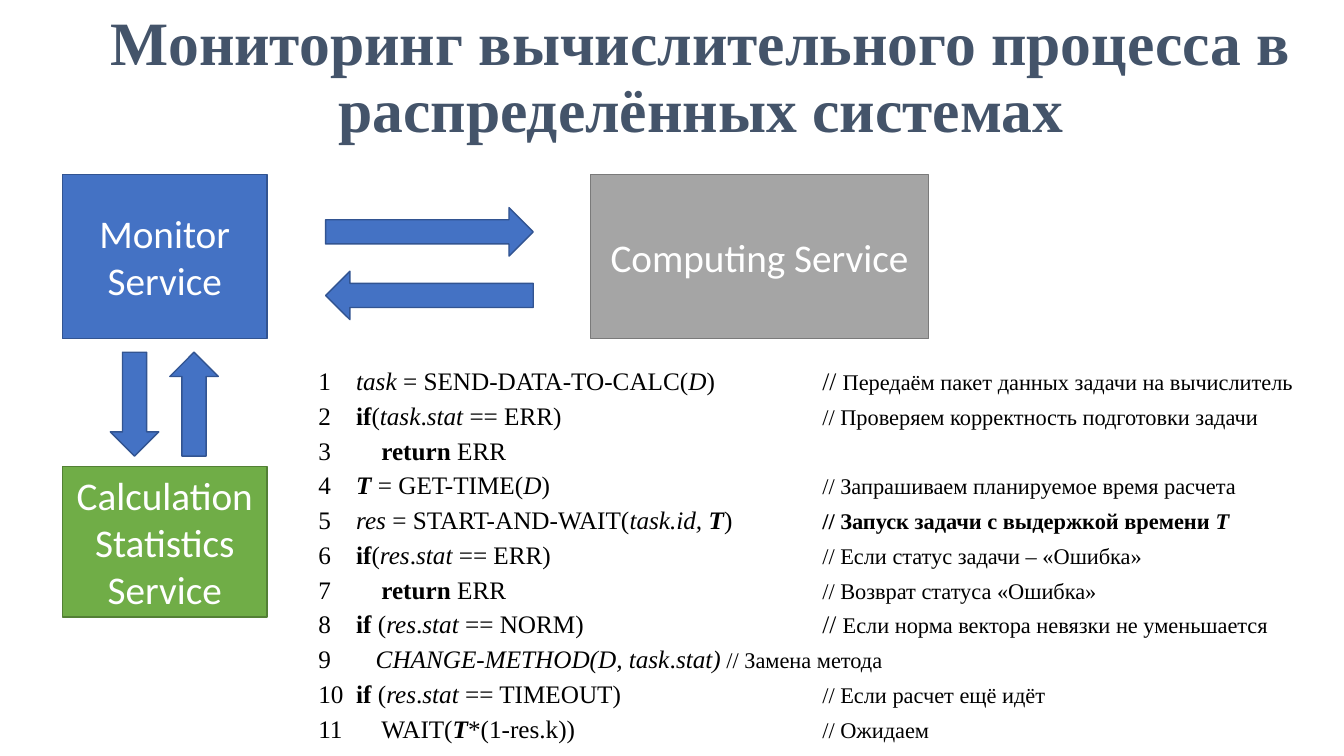
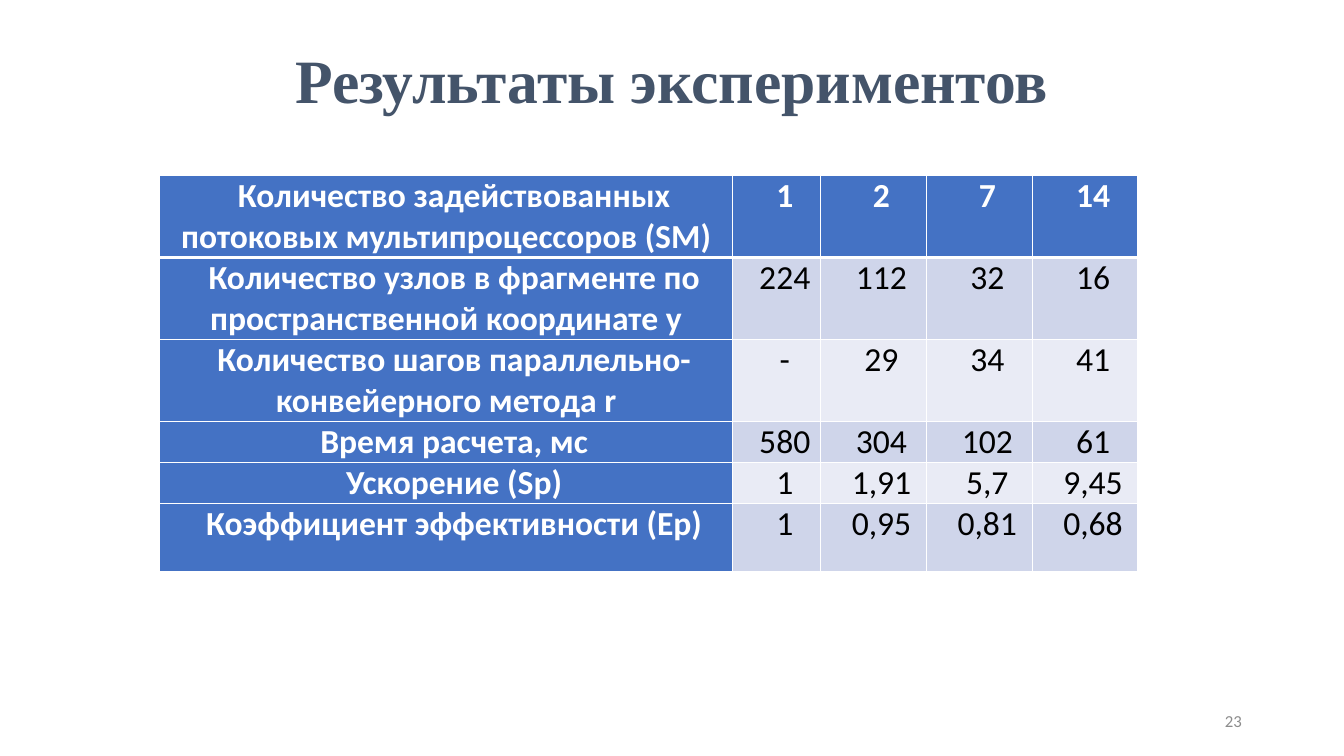
"""Builds two slides on monitoring distributed computations and the experiment results."""
from lxml import etree
from pptx import Presentation
from pptx.dml.color import RGBColor
from pptx.enum import shapes, text
from pptx.oxml import ns
from pptx.util import Pt

SLATE = RGBColor(0x44, 0x54, 0x6A)
BLUE, BLUE_EDGE = RGBColor(0x44, 0x72, 0xC4), RGBColor(0x32, 0x54, 0x91)
GREY, GREY_EDGE = RGBColor(0xA5, 0xA5, 0xA5), RGBColor(0x7A, 0x7A, 0x7A)
GREEN, GREEN_EDGE = RGBColor(0x70, 0xAD, 0x47), RGBColor(0x53, 0x80, 0x35)
BANDS = RGBColor(0xCF, 0xD5, 0xEA), RGBColor(0xE9, 0xEB, 0xF5)
PAGE_GREY = RGBColor(0x8C, 0x8C, 0x8C)
WHITE, BLACK = RGBColor(255, 255, 255), RGBColor(0, 0, 0)

TITLE_FONT = {"name": "Times New Roman", "size": Pt(44), "bold": True}
CODE_FONT = {"name": "Times New Roman", "size": Pt(18)}
SERVICE_FONT = {"name": "Calibri", "size": Pt(28)}
TABLE_FONT = {"name": "Calibri", "size": Pt(24)}
PAGE_FONT = {"name": "Calibri", "size": Pt(12)}
STYLES = {"b": {"bold": True}, "i": {"italic": True}, "s": {"size": Pt(16)}}
CENTER = text.PP_ALIGN.CENTER

MONITORING_TITLE = "Мониторинг вычислительного процесса в распределённых системах"
SERVICES = [
    ("Monitor Service", (44.6, 124.6, 146.2, 117.4), BLUE, BLUE_EDGE),
    ("Computing Service", (421.9, 124.6, 241.2, 117.4), GREY, GREY_EDGE),
    ("Calculation Statistics Service", (44.6, 333.4, 146.2, 107.3), GREEN, GREEN_EDGE),
]
ARROWS = [
    ((232.6, 148.3, 148.3, 34.6), 0),
    ((232.6, 193.7, 148.3, 34.6), 180),
    ((59, 271.4, 74.2, 34.6), 90),
    ((101.5, 271.4, 74.2, 34.6), 270),
]
FLAT, NESTED, SHALLOW, COMMENT = 27, 45, 41, 360
CODE = [
    (FLAT, [("task", "i"), (" = SEND-DATA-TO-CALC(", ""), ("D", "i"), (")\t// ", ""),
            ("Передаём пакет данных задачи на вычислитель", "s")]),
    (FLAT, [("if", "b"), ("(", ""), ("task", "i"), (".", ""), ("stat", "i"), (" == ERR)\t", ""),
            ("// Проверяем корректность подготовки задачи", "s")]),
    (NESTED, [("return ", "b"), ("ERR", "")]),
    (FLAT, [("T", "bi"), (" = GET-TIME(", ""), ("D", "i"), (")\t", ""),
            ("// Запрашиваем планируемое время расчета", "s")]),
    (FLAT, [("res ", "i"), ("= START-AND-WAIT(", ""), ("task.id, ", "i"), ("T", "bi"), (")\t", ""),
            ("// Запуск задачи с выдержкой времени ", "bs"), ("Т", "bis")]),
    (FLAT, [("if", "b"), ("(", ""), ("res", "i"), (".", ""), ("stat ", "i"), ("== ERR)\t", ""),
            ("// Если статус задачи – «Ошибка»", "s")]),
    (NESTED, [("return ", "b"), ("ERR\t", ""), ("// Возврат статуса «Ошибка»", "s")]),
    (FLAT, [("if ", "b"), ("(", ""), ("res", "i"), (".", ""), ("stat", "i"), (" == NORM)\t// ", ""),
            ("Если норма вектора невязки не уменьшается", "s")]),
    (SHALLOW, [("CHANGE-METHOD(D, task", "i"), (".", ""), ("stat)", "i"), (" // Замена метода", "s")]),
    (FLAT, [("if ", "b"), ("(", ""), ("res", "i"), (".", ""), ("stat", "i"), (" == TIMEOUT)\t", ""),
            ("// Если расчет ещё идёт", "s")]),
    (NESTED, [("WAIT(", ""), ("T", "bi"), ("*(1-res.k))\t", ""), ("// Ожидаем", "s")]),
]

RESULTS_TITLE = "Результаты экспериментов"
PAGE_NUMBER = "23"
RESULTS = [
    ("Количество задействованных потоковых мультипроцессоров (SM)", "1", "2", "7", "14"),
    ("Количество узлов в фрагменте по пространственной координате y", "224", "112", "32", "16"),
    ("Количество шагов параллельно-конвейерного метода r", "-", "29", "34", "41"),
    ("Время расчета, мс", "580", "304", "102", "61"),
    ("Ускорение (Sp)", "1", "1,91", "5,7", "9,45"),
    ("Коэффициент эффективности (Ep)", "1", "0,95", "0,81", "0,68"),
]
COLUMN_WIDTHS = [409.7, 62.6] + [75.6] * 3
ROW_HEIGHTS = [58.6] * 3 + [29.3] * 2 + [49]


def points(box):
    return [Pt(length) for length in box]


def assign(target, values):
    for key, value in values.items():
        setattr(target, key, value)


def add_run(paragraph, words, font, color, style=""):
    run = paragraph.add_run()
    run.text = words
    assign(run.font, font)
    for mark in style:
        assign(run.font, STYLES[mark])
    run.font.color.rgb = color


def add_titled_slide(deck, title, box):
    slide = deck.slides.add_slide(deck.slide_layouts[5])
    heading = slide.shapes.title
    assign(heading, dict(zip(("left", "top", "width", "height"), points(box))))
    assign(heading.text_frame, {"vertical_anchor": text.MSO_ANCHOR.MIDDLE, "word_wrap": True,
                                "auto_size": text.MSO_AUTO_SIZE.NONE})
    paragraph = heading.text_frame.paragraphs[0]
    assign(paragraph, {"alignment": CENTER, "line_spacing": 0.9})
    add_run(paragraph, title, TITLE_FONT, SLATE)
    return slide


def add_block(slide, preset, box, fill, edge):
    block = slide.shapes.add_shape(preset, *points(box))
    block.shadow.inherit = False
    block.fill.solid()
    block.fill.fore_color.rgb = fill
    block.line.color.rgb = edge
    block.line.width = Pt(1)
    return block


def add_tab_stops(paragraph, stops):
    tabs = etree.SubElement(paragraph._p.get_or_add_pPr(), ns.qn("a:tabLst"))
    for stop in stops:
        etree.SubElement(tabs, ns.qn("a:tab"), pos=str(Pt(stop)), algn="l")


def add_code(slide):
    frame = slide.shapes.add_textbox(*points((220.3, 254.2, 728.6, 283))).text_frame
    frame.word_wrap = True
    for number, (indent, runs) in enumerate(CODE, 1):
        paragraph = frame.paragraphs[0] if number == 1 else frame.add_paragraph()
        assign(paragraph, {"alignment": text.PP_ALIGN.LEFT, "line_spacing": 1.15})
        add_tab_stops(paragraph, (indent, COMMENT))
        for words, style in [(f"{number}\t", "")] + runs:
            add_run(paragraph, words, CODE_FONT, BLACK, style)


def add_borders(cell, widths):
    properties = cell._tc.get_or_add_tcPr()
    for side, width in widths.items():
        line = etree.SubElement(properties, ns.qn(f"a:ln{side}"), w=str(Pt(width)))
        paint = etree.SubElement(line, ns.qn("a:solidFill"))
        etree.SubElement(paint, ns.qn("a:srgbClr"), val=str(WHITE))


def add_results(slide):
    box = (113.8, 125.3, sum(COLUMN_WIDTHS), sum(ROW_HEIGHTS))
    table = slide.shapes.add_table(len(RESULTS), len(COLUMN_WIDTHS), *points(box)).table
    for column, width in zip(table.columns, COLUMN_WIDTHS):
        column.width = Pt(width)
    for row, height in zip(table.rows, ROW_HEIGHTS):
        row.height = Pt(height)
    for r, values in enumerate(RESULTS):
        for c, value in enumerate(values):
            cell = table.cell(r, c)
            heading = r == 0 or c == 0
            add_borders(cell, {"L": 1, "R": 1, "T": 3 if r == 1 else 1, "B": 3 if r == 0 else 1})
            cell.fill.solid()
            cell.fill.fore_color.rgb = BLUE if heading else BANDS[(r - 1) % 2]
            assign(cell, {"margin_left": Pt(5), "margin_right": Pt(5),
                          "margin_top": 0, "margin_bottom": 0})
            paragraph = cell.text_frame.paragraphs[0]
            paragraph.alignment = CENTER
            paragraph._p.get_or_add_pPr().set("indent", str(Pt(11.5)))
            add_run(paragraph, value, {**TABLE_FONT, "bold": heading}, WHITE if heading else BLACK)


def add_page_number(slide):
    frame = slide.shapes.add_textbox(*points((678.2, 500.4, 216, 28.8))).text_frame
    assign(frame, {"word_wrap": True, "vertical_anchor": text.MSO_ANCHOR.MIDDLE})
    frame.paragraphs[0].alignment = text.PP_ALIGN.RIGHT
    add_run(frame.paragraphs[0], PAGE_NUMBER, PAGE_FONT, PAGE_GREY)


def main():
    deck = Presentation()
    assign(deck, {"slide_width": Pt(960), "slide_height": Pt(540)})

    monitoring = add_titled_slide(deck, MONITORING_TITLE, (20.9, 0.7, 960, 111.6))
    for name, box, fill, edge in SERVICES:
        service = add_block(monitoring, shapes.MSO_SHAPE.RECTANGLE, box, fill, edge)
        service.text_frame.vertical_anchor = text.MSO_ANCHOR.MIDDLE
        paragraph = service.text_frame.paragraphs[0]
        paragraph.alignment = CENTER
        add_run(paragraph, name, SERVICE_FONT, WHITE)
    for box, angle in ARROWS:
        arrow = add_block(monitoring, shapes.MSO_SHAPE.RIGHT_ARROW, box, BLUE, BLUE_EDGE)
        arrow.rotation = angle
    add_code(monitoring)

    experiments = add_titled_slide(deck, RESULTS_TITLE, (0, 0, 960, 119.5))
    add_page_number(experiments)
    add_results(experiments)
    deck.save("out.pptx")


if __name__ == "__main__":
    main()
